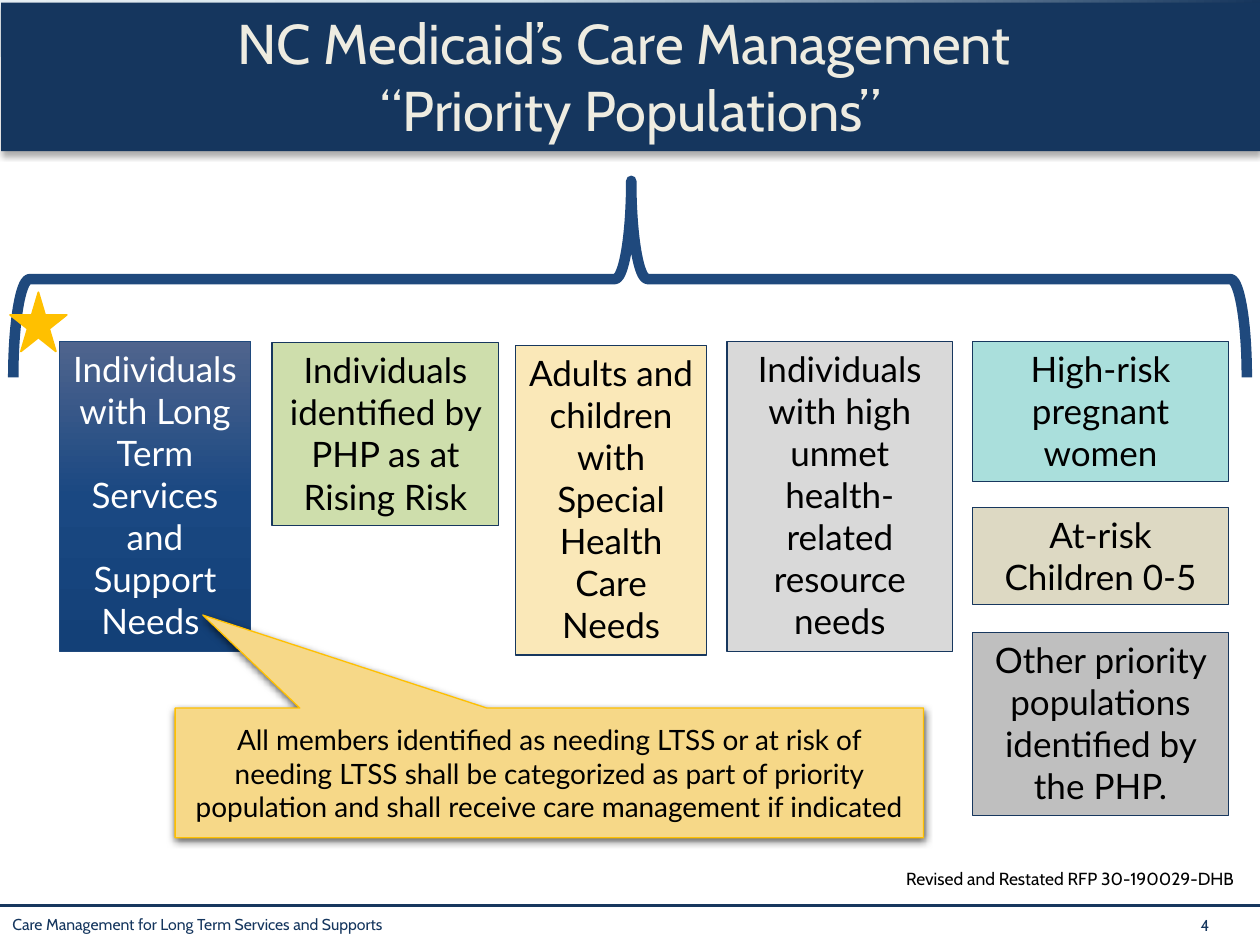
from lxml import etree
from pptx import Presentation
from pptx.dml.color import RGBColor
from pptx.enum import shapes, text
from pptx.oxml.ns import qn
from pptx.util import Inches, Pt

COLORS = {
    "navy": "15365E", "rule": "17375E", "blue": "1F497D", "cream": "EEECE1",
    "black": "000000", "white": "FFFFFF", "gold": "FFC000", "callout": "F6D888",
    "green": "CEDEAC", "yellow": "FAE8B8", "silver": "D9D9D9", "teal": "AADFDC",
    "tan": "DDD9C3", "gray": "BFBFBF", "ltss_top": "4F648D", "ltss_mid": "1A4882",
    "ltss_end": "134077", "strip_mid": "D3E4ED", "strip_end": "E9F1F6",
}
TITLE = ["NC Medicaid’s Care Management ", "“Priority Populations”"]
LTSS = "Individuals with Long Term Services and Support Needs "
LTSS_BOX = (0.47, 2.71, 1.52, 2.46)
# Other populations: text, (left, top, width, height), fill
POPULATIONS = [
    ("Individuals identified by PHP as at Rising Risk", (2.16, 2.72, 1.8, 1.45), "green"),
    ("Adults and children with Special Health Care Needs", (4.09, 2.74, 1.52, 2.46), "yellow"),
    ("Individuals with high unmet health-related resource needs", (5.77, 2.71, 1.79, 2.46), "silver"),
    ("High-risk pregnant women", (7.72, 2.71, 2.03, 1.11), "teal"),
    ("At-risk Children 0-5", (7.72, 4.03, 2.03, 0.77), "tan"),
    ("Other priority populations identified by the PHP.", (7.72, 5.02, 2.03, 1.45), "gray"),
]
CALLOUT = ("All members identified as needing LTSS or at risk of needing LTSS shall be "
           "categorized as part of priority population and shall receive care "
           "management if indicated")
FOOTER = "Care Management for Long Term Services and Supports"
PAGE = "4"
SOURCE = "Revised and Restated RFP 30-190029-DHB"

LEFT, CENTER, RIGHT = text.PP_ALIGN.LEFT, text.PP_ALIGN.CENTER, text.PP_ALIGN.RIGHT
TOP, MIDDLE = text.MSO_ANCHOR.TOP, text.MSO_ANCHOR.MIDDLE
KIND = shapes.MSO_SHAPE

prs = Presentation()
prs.slide_width, prs.slide_height = Inches(10), Inches(7.5)
slide = prs.slides.add_slide(prs.slide_layouts[6])


def rgb(name):
    return RGBColor.from_string(COLORS[name])


def add_color(parent, name, alpha=None):
    color = etree.SubElement(parent, qn("a:srgbClr"), val=COLORS[name])
    if alpha:
        etree.SubElement(color, qn("a:alpha"), val=str(alpha * 1000))


def write(shape, lines, size, font, color, align=CENTER, anchor=TOP, **spacing):
    frame = shape.text_frame
    frame.word_wrap = True
    frame.vertical_anchor = anchor
    for i, line in enumerate(lines):
        para = frame.paragraphs[0] if i == 0 else frame.add_paragraph()
        para.alignment = align
        for name, value in spacing.items():
            setattr(para, name, value)
        run = para.add_run()
        run.text = line
        run.font.size, run.font.name = Pt(size), font
        run.font.color.rgb = rgb(color)


def add_shape(kind, box, fill=None, line=None, adjust=()):
    shape = slide.shapes.add_shape(kind, *map(Inches, box))
    shape.shadow.inherit = False
    for i, value in enumerate(adjust):
        shape.adjustments[i] = value
    if fill:
        shape.fill.solid()
        shape.fill.fore_color.rgb = rgb(fill)
    else:
        shape.fill.background()
    if line:
        shape.line.color.rgb, shape.line.width = rgb(line[0]), Pt(line[1])
    else:
        shape.line.fill.background()
    return shape


def set_gradient(shape, stops, angle):
    old = shape.fill._xPr.find(qn("a:noFill"))
    gradient = etree.Element(qn("a:gradFill"), rotWithShape="1")
    stop_list = etree.SubElement(gradient, qn("a:gsLst"))
    for position, color in stops:
        add_color(etree.SubElement(stop_list, qn("a:gs"), pos=str(position * 1000)), color)
    etree.SubElement(gradient, qn("a:lin"), ang=str(angle * 60000), scaled="0")
    old.getparent().replace(old, gradient)


def set_shadow(shape, alpha, blur, distance):
    effects = shape._element.spPr.find(qn("a:effectLst"))
    shadow = etree.SubElement(effects, qn("a:outerShdw"), blurRad=str(Pt(blur)),
                              dist=str(Pt(distance)), dir=str(90 * 60000),
                              algn="ctr", rotWithShape="0")
    add_color(shadow, "black", alpha)


def add_note(line, box, size, color, align=LEFT, **spacing):
    note = slide.shapes.add_textbox(*map(Inches, box))
    write(note, [line], size, "Cabin", color, align, **spacing)


# Footer and page frame
add_note(FOOTER, (0, 7.21, 8.74, 0.29), 9, "navy")
add_note(PAGE, (9.43, 7.22, 0.44, 0.3), 9, "navy")
strip = add_shape(KIND.RECTANGLE, (0, 0, 10, 0.45))
set_gradient(strip, [(0, "rule"), (60, "strip_mid"), (100, "strip_end")], 180)
footer_rule = slide.shapes.add_connector(
    shapes.MSO_CONNECTOR.STRAIGHT, 0, Inches(7.19), Inches(10), Inches(7.19))
footer_rule.line.color.rgb, footer_rule.line.width = rgb("rule"), Pt(1.75)
etree.SubElement(footer_rule._element.spPr, qn("a:effectLst"))

# Brace and title
brace = add_shape(KIND.RIGHT_BRACE, (4.22, -2.68, 1.56, 9.79),
                  line=("blue", 6), adjust=(0.083, 0.501))
brace.rotation = 270
title = add_shape(KIND.RECTANGLE, (0.01, 0.02, 9.99, 1.18), "navy")
set_shadow(title, 32, 3.5, 2.2)
write(title, TITLE, 32, "Cabin", "cream")

# Priority populations
ltss = add_shape(KIND.RECTANGLE, LTSS_BOX, line=("blue", 0.5))
set_gradient(ltss, [(0, "ltss_top"), (50, "ltss_mid"), (100, "ltss_end")], 90)
write(ltss, [LTSS], 20, "Lato", "white")
for population, box, fill in POPULATIONS:
    write(add_shape(KIND.RECTANGLE, box, fill, ("rule", 0.75)),
          [population], 20, "Lato", "black")

# Callout, star and source
callout = add_shape(KIND.RECTANGULAR_CALLOUT, (1.39, 5.62, 5.94, 1.03), "callout",
                    ("gold", 0.75), (-0.463, -1.217))
set_shadow(callout, 63, 4.5, 1.5)
write(callout, [CALLOUT], 16, "Lato", "black", anchor=MIDDLE)
add_shape(KIND.STAR_5_POINT, (0.08, 2.32, 0.45, 0.47), "gold", ("gold", 1))
add_note(SOURCE, (5.55, 6.86, 4.34, 0.25), 10, "black", RIGHT,
         line_spacing=0.9, space_before=Pt(7.5))

prs.save("out.pptx")
